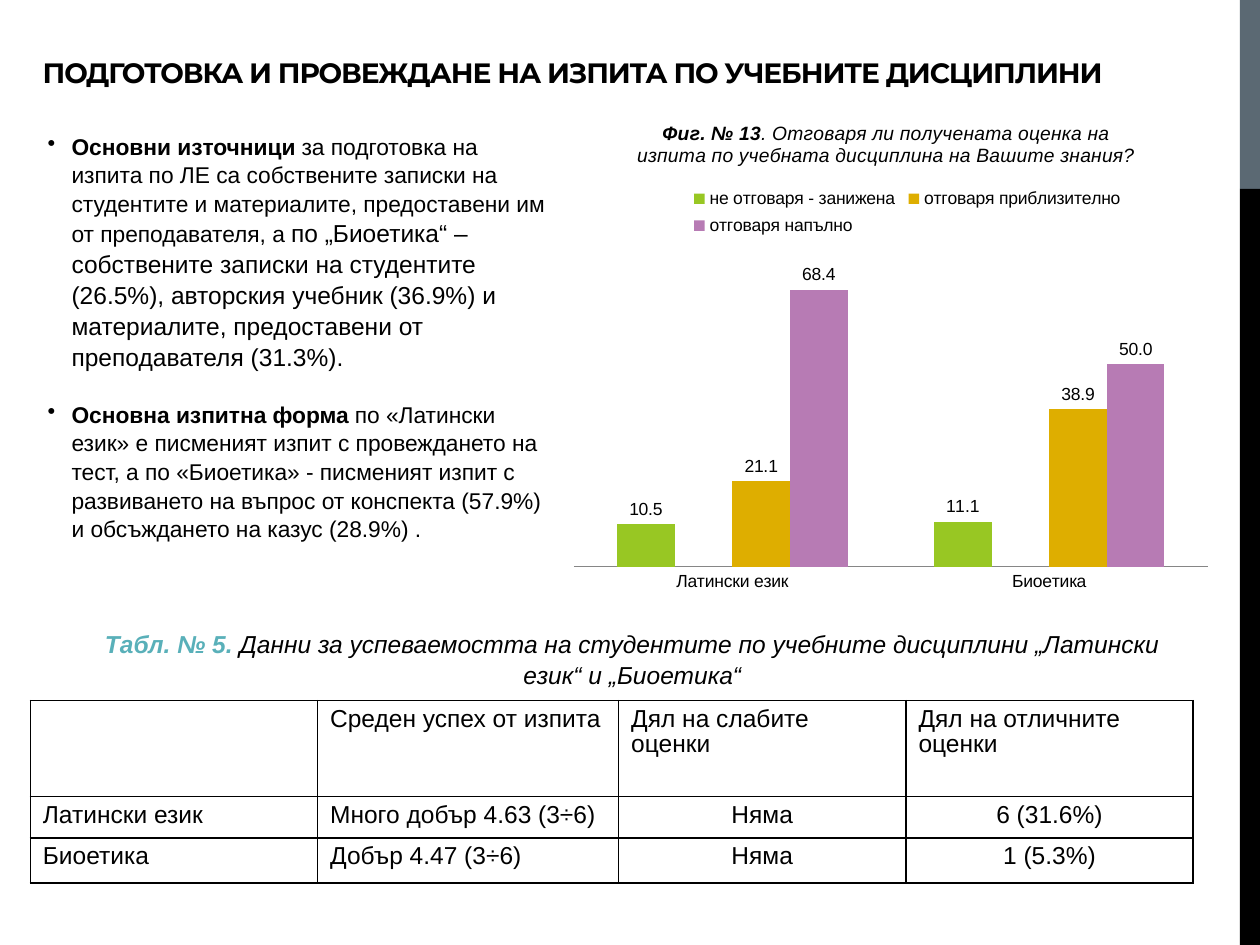
import pptx
import pptx.chart.data
import pptx.dml.color
import pptx.enum.chart
import pptx.enum.shapes
import pptx.enum.text
import pptx.oxml
import pptx.util
from pptx.util import Inches

FONT = "Arial"
BLACK = "000000"
CENTER = pptx.enum.text.PP_ALIGN.CENTER


def color(hex_string):
    return pptx.dml.color.RGBColor.from_string(hex_string)


def style(font, size, name=FONT):
    font.name = name
    font.size = pptx.util.Pt(size)
    font.color.rgb = color(BLACK)


presentation = pptx.Presentation()
presentation.slide_width = Inches(10)
presentation.slide_height = Inches(7.5)
slide = presentation.slides.add_slide(presentation.slide_layouts[6])
shapes = slide.shapes

# Side band
for top, height, fill in [(0, 1.5, "5B6973"), (1.5, 6, BLACK)]:
    band = shapes.add_shape(pptx.enum.shapes.MSO_SHAPE.RECTANGLE,
                            Inches(9.84), Inches(top), Inches(0.16), Inches(height))
    band.shadow.inherit = False
    band.fill.solid()
    band.fill.fore_color.rgb = color(fill)
    band.line.fill.background()

# Heading
heading = shapes.add_textbox(Inches(0.24), Inches(0.29), Inches(9.61), Inches(0.47))
heading.text_frame.word_wrap = True
heading.text_frame.vertical_anchor = pptx.enum.text.MSO_ANCHOR.BOTTOM
paragraph = heading.text_frame.paragraphs[0]
run = paragraph.add_run()
run.text = "ПОДГОТОВКА И ПРОВЕЖДАНЕ НА ИЗПИТА ПО УЧЕБНИТЕ ДИСЦИПЛИНИ"
run._r.get_or_add_rPr().set("spc", "-60")
style(paragraph.font, 16, "Montserrat")
paragraph.font.bold = True

# Findings: each run is text, size, bold
findings = [
    [("Основни източници", 13, True),
     (" за подготовка на изпита по ЛЕ са собствените записки на студентите и "
      "материалите, предоставени им от преподавателя, а ", 13, False),
     ("по „Биоетика“ – собствените записки на студентите (26.5%), авторския учебник "
      "(36.9%) и материалите, предоставени от преподавателя (31.3%).", 14, False)],
    [("Основна изпитна форма ", 13, True),
     ("по «Латински език» е писменият изпит с провеждането на тест, а по «Биоетика» - "
      "писменият изпит с развиването на въпрос от конспекта (57.9%) и обсъждането на "
      "казус (28.9%) .", 13, False)],
]
body = shapes.add_textbox(Inches(0.28), Inches(0.99), Inches(4.17), Inches(3.54))
body.text_frame.word_wrap = True
for index, runs in enumerate(findings):
    paragraph = body.text_frame.paragraphs[0]
    if index:
        paragraph = body.text_frame.add_paragraph()
        paragraph.space_before = pptx.util.Pt(16)
    paragraph.line_spacing = 1.05
    properties = paragraph._p.get_or_add_pPr()
    properties.set("marL", str(Inches(0.19)))
    properties.set("indent", str(Inches(-0.19)))
    bullet = pptx.oxml.parse_xml(
        '<a:buChar xmlns:a="http://schemas.openxmlformats.org/drawingml/2006/main" char="•"/>')
    properties.append(bullet)
    style(paragraph.font, 13)
    for text, size, bold in runs:
        run = paragraph.add_run()
        run.text = text
        run.font.size = pptx.util.Pt(size)
        run.font.bold = bold

# Grades table
rows = [
    ["", "Среден успех от изпита", "Дял на слабите оценки", "Дял на отличните оценки"],
    ["Латински език", "Много добър 4.63 (3÷6)", "Няма", "6 (31.6%)"],
    ["Биоетика", "Добър 4.47 (3÷6)", "Няма", "1 (5.3%)"],
]
table = shapes.add_table(3, 4, Inches(0.24), Inches(5.56), Inches(9.22), Inches(1.45)).table
for column, width in zip(table.columns, [2.28, 2.39, 2.28, 2.28]):
    column.width = Inches(width)
for row, height in zip(table.rows, [0.76, 0.33, 0.36]):
    row.height = Inches(height)
for row_index, texts in enumerate(rows):
    for column_index, text in enumerate(texts):
        cell = table.cell(row_index, column_index)
        cell.text = text
        paragraph = cell.text_frame.paragraphs[0]
        paragraph.line_spacing = 0.93
        style(paragraph.font, 14)
        paragraph.font.bold = False
        if row_index and column_index > 1:
            paragraph.alignment = CENTER
        properties = cell._tc.get_or_add_tcPr()
        for side in ["lnL", "lnR", "lnT", "lnB"]:
            properties.append(pptx.oxml.parse_xml(
                f'<a:{side} xmlns:a="http://schemas.openxmlformats.org/drawingml/2006/main" '
                f'w="12700"><a:solidFill><a:srgbClr val="{BLACK}"/></a:solidFill></a:{side}>'))
        cell.fill.background()

# Table caption
caption = shapes.add_textbox(Inches(0.57), Inches(4.93), Inches(8.9), Inches(0.57))
caption.text_frame.word_wrap = True
paragraph = caption.text_frame.paragraphs[0]
paragraph.alignment = CENTER
paragraph.line_spacing = 1.05
style(paragraph.font, 14)
paragraph.font.italic = True
label = paragraph.add_run()
label.text = "Табл. № 5. "
label.font.bold = True
label.font.color.rgb = color("59B0B9")
paragraph.add_run().text = ("Данни за успеваемостта на студентите по учебните дисциплини "
                            "„Латински език“ и „Биоетика“")

# Chart
series_data = [
    ("не отговаря - занижена", [10.5, 11.1], "98C723"),
    ("Series 2", [None, None], "59B0B9"),
    ("отговаря приблизително", [21.1, 38.9], "DEAE00"),
    ("отговаря напълно", [68.4, 50], "B77BB4"),
]
chart_data = pptx.chart.data.CategoryChartData(number_format="0.0")
chart_data.categories = ["Латински език", "Биоетика"]
for name, values, fill in series_data:
    chart_data.add_series(name, values)
chart = shapes.add_chart(pptx.enum.chart.XL_CHART_TYPE.COLUMN_CLUSTERED, Inches(4.45),
                         Inches(0.76), Inches(5.24), Inches(4.02), chart_data).chart
style(chart.font, 10)

chart.has_title = True
paragraph = chart.chart_title.text_frame.paragraphs[0]
style(paragraph.font, 11)
paragraph.font.italic = True
paragraph.font.bold = False
for text, bold in [("Фиг. № 13", True),
                   (". Отговаря ли получената оценка на изпита по учебната дисциплина "
                    "на Вашите знания?", False)]:
    run = paragraph.add_run()
    run.text = text
    style(run.font, 11)
    run.font.bold = bold
    run.font.italic = True

plot = chart.plots[0]
plot.gap_width = 150
plot.overlap = 0
plot.vary_by_categories = False
for series, (name, values, fill) in zip(plot.series, series_data):
    series.format.fill.solid()
    series.format.fill.fore_color.rgb = color(fill)
    labels = series.data_labels
    labels.show_value = True
    labels.number_format = "0.0"
    labels.number_format_is_linked = False
    labels.position = pptx.enum.chart.XL_LABEL_POSITION.OUTSIDE_END

chart.value_axis.visible = False
chart.value_axis.has_major_gridlines = False
chart.value_axis.minimum_scale = 0
chart.value_axis.maximum_scale = 80
chart.category_axis.major_tick_mark = pptx.enum.chart.XL_TICK_MARK.NONE
chart.category_axis.format.line.color.rgb = color("868686")

chart.has_legend = True
chart.legend.position = pptx.enum.chart.XL_LEGEND_POSITION.TOP
chart.legend.include_in_layout = False

# Fixed places of the chart parts, as shares of the chart area
CHART_NAMESPACE = 'xmlns:c="http://schemas.openxmlformats.org/drawingml/2006/chart"'
legend = chart.legend._element
legend.insert(1, pptx.oxml.parse_xml(
    f'<c:legendEntry {CHART_NAMESPACE}><c:idx val="1"/><c:delete val="1"/></c:legendEntry>'))
placements = [
    (chart.chart_title._element, 1, "", {"x": 0.11, "y": 0.04}),
    (chart._chartSpace.chart.plotArea, 0, '<c:layoutTarget val="inner"/>',
     {"x": 0.02, "y": 0.29, "w": 0.96, "h": 0.64}),
    (legend, 2, "", {"x": 0.19, "y": 0.17, "w": 0.67, "h": 0.12}),
]
for element, position, target, shares in placements:
    for layout in element.xpath("c:layout"):
        element.remove(layout)
    modes = "".join(f'<c:{key}Mode val="edge"/>' for key in "xy")
    sizes = "".join(f'<c:{key} val="{share}"/>' for key, share in shares.items())
    element.insert(position, pptx.oxml.parse_xml(
        f'<c:layout {CHART_NAMESPACE}><c:manualLayout>{target}{modes}{sizes}'
        '</c:manualLayout></c:layout>'))

presentation.save("out.pptx")
